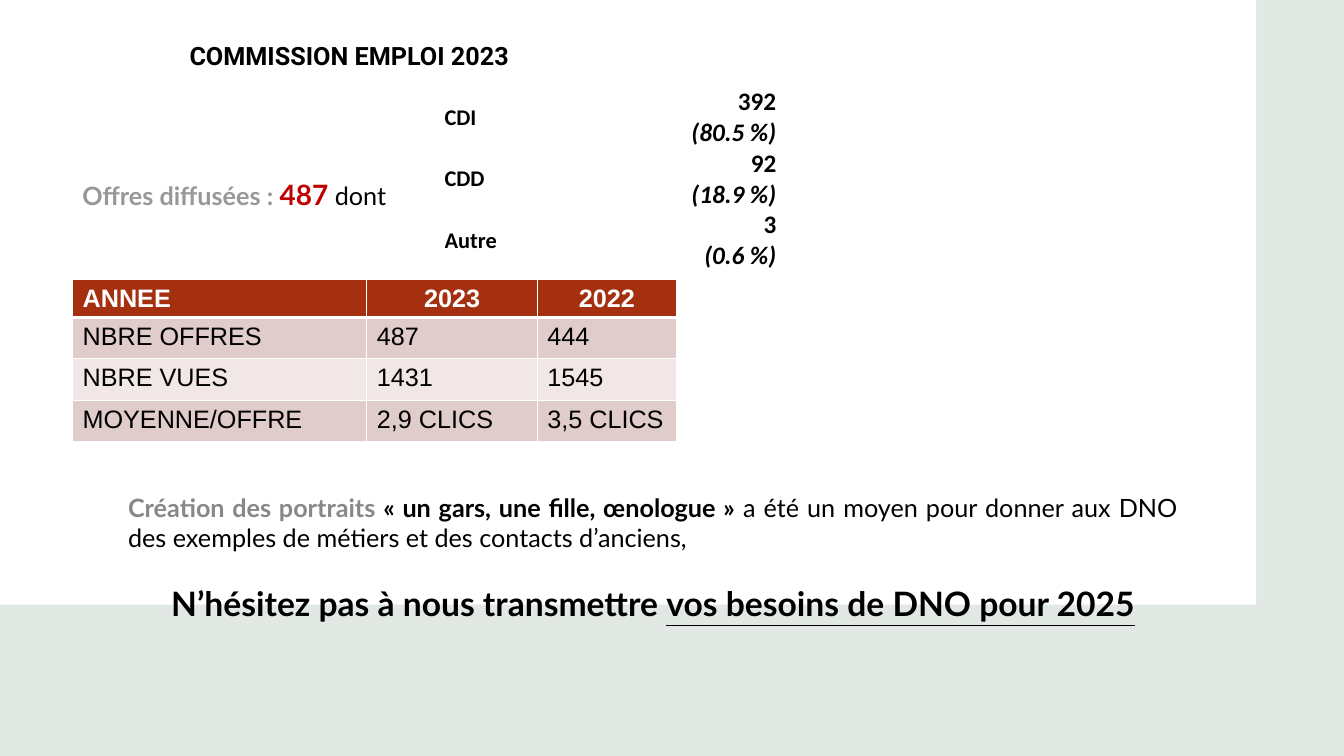
from dataclasses import dataclass

from lxml import etree
from pptx import Presentation
from pptx import util as u
from pptx.dml.color import RGBColor
from pptx.enum import shapes, text
from pptx.oxml import ns

LEFT, MID, RIGHT, JUST = (
    text.PP_ALIGN.LEFT, text.PP_ALIGN.CENTER, text.PP_ALIGN.RIGHT, text.PP_ALIGN.JUSTIFY)
TOP, HALF, BASE = (
    text.MSO_ANCHOR.TOP, text.MSO_ANCHOR.MIDDLE, text.MSO_ANCHOR.BOTTOM)


@dataclass(frozen=True)
class Theme:
    """Colours, fonts and type sizes of the slide."""
    sage: str = "E2E8E4"
    white: str = "FFFFFF"
    black: str = "000000"
    grey: str = "989898"
    dim: str = "888888"
    red: str = "C00000"
    rust: str = "A5300F"
    rose: str = "E0CCCA"
    pale: str = "F0E7E6"
    head: str = "Roboto"
    body: str = "Lato"
    jobs: str = "Calibri"
    grid: str = "Arial"
    small: int = 16
    base: int = 18
    large: int = 20
    huge: int = 24


class Page:
    """Draws on one slide, with lengths in percent of its width and height."""

    def __init__(self, deck, theme):
        self.deck, self.theme = deck, theme
        self.slide = deck.slides.add_slide(deck.slide_layouts[1])
        self.depth = 2

    def wide(self, share):
        return round(self.deck.slide_width * share / 100)

    def high(self, share):
        return round(self.deck.slide_height * share / 100)

    def box(self, x, y, w, h):
        return self.wide(x), self.high(y), self.wide(w), self.high(h)

    def style(self, font, name=None, size=None, color=None, **flags):
        if name:
            font.name = name
        if size:
            font.size = u.Pt(size)
        if color:
            font.color.rgb = RGBColor.from_string(color)
        for key, flag in flags.items():
            setattr(font, key, flag)

    def fill(self, para, runs, align=LEFT, **look):
        para.alignment = align
        self.style(para.font, **look)
        for words, extra in runs:
            run = para.add_run()
            run.text = words
            self.style(run.font, **extra)

    def panel(self, w, h, color):
        rect = self.slide.shapes.add_shape(
            shapes.MSO_SHAPE.RECTANGLE, *self.box(0, 0, w, h))
        rect.shadow.inherit = False
        rect.fill.solid()
        rect.fill.fore_color.rgb = RGBColor.from_string(color)
        rect.line.fill.background()
        self.slide.shapes._spTree.insert(self.depth, rect._element)
        self.depth += 1

    def frame(self, shape, anchor=TOP):
        frame = shape.text_frame
        frame.word_wrap = True
        frame.auto_size = text.MSO_AUTO_SIZE.NONE
        frame.vertical_anchor = anchor
        return frame

    def holder(self, index, place):
        shape = self.slide.placeholders[index]
        shape.left, shape.top, shape.width, shape.height = self.box(*place)
        return self.frame(shape)

    def label(self, place):
        return self.frame(self.slide.shapes.add_textbox(*self.box(*place)), BASE)

    def plain(self, para):
        props = para._p.get_or_add_pPr()
        props.set("marL", "0")
        props.set("indent", "0")
        props.insert_element_before(
            etree.Element(ns.qn("a:buNone")), "a:tabLst", "a:defRPr", "a:extLst")

    def table(self, x, y, cols, rows):
        frame = self.slide.shapes.add_table(
            len(rows), len(cols), *self.box(x, y, sum(cols), sum(rows)))
        table = frame.table
        table.first_row = table.horz_banding = False
        for col, share in zip(table.columns, cols):
            col.width = self.wide(share)
        for row, share in zip(table.rows, rows):
            row.height = self.high(share)
        return table

    def cell(self, cell, words, shade, align=LEFT, anchor=TOP, pad=None, **look):
        cell.fill.solid()
        cell.fill.fore_color.rgb = RGBColor.from_string(shade)
        cell.vertical_anchor = anchor
        if pad is not None:
            cell.margin_left = cell.margin_right = pad
            cell.margin_top = cell.margin_bottom = pad
        self.fill(cell.text_frame.paragraphs[0], [(words, {})], align, **look)

    def edges(self, cell, **widths):
        props = cell._tc.get_or_add_tcPr()
        for spot, side in enumerate("LRTB"):
            line = etree.Element(ns.qn("a:ln" + side), w=str(u.Pt(widths.get(side, 1))))
            fill = etree.SubElement(line, ns.qn("a:solidFill"))
            etree.SubElement(fill, ns.qn("a:srgbClr"), val=self.theme.white)
            props.insert(spot, line)


def main():
    deck = Presentation()
    deck.slide_width, deck.slide_height = u.Inches(13.33), u.Inches(7.5)
    look = Theme()
    page = Page(deck, look)
    page.panel(100, 100, look.sage)
    page.panel(93.47, 80, look.white)

    title = page.holder(0, (13.35, 3.87, 66.77, 6.13)).paragraphs[0]
    title.line_spacing = 1.2
    page.fill(title, [("COMMISSION EMPLOI 2023", {})],
              name=look.head, size=look.base, color=look.black, bold=True)

    offers = page.label((5.4, 15.47, 25.73, 13.07)).paragraphs[0]
    page.fill(offers, [
        ("Offres diffusées : ", dict(size=look.base, color=look.grey, bold=True)),
        ("487", dict(size=look.large, color=look.red, bold=True)),
        (" dont ", dict(size=look.base, color=look.black)),
    ], JUST, name=look.body)

    jobs = [("CDI", "392", "(80.5 %)"), ("CDD", "92", "(18.9 %)"), ("Autre", "3", "(0.6 %)")]
    split = page.table(33.08, 11.47, [11.85, 12.83], [4.07] * 2 * len(jobs))
    bold = dict(shade=look.white, pad=0, name=look.jobs, color=look.black, bold=True)
    for i, (kind, count, share) in enumerate(jobs):
        top, low = 2 * i, 2 * i + 1
        split.cell(top, 0).merge(split.cell(low, 0))
        page.cell(split.cell(top, 0), kind, anchor=HALF, size=look.small, **bold)
        page.cell(split.cell(top, 1), count, align=RIGHT, anchor=BASE, size=look.base, **bold)
        page.cell(split.cell(low, 1), share, align=RIGHT, anchor=BASE, size=look.base,
                  italic=True, **bold)

    years = [
        ("ANNEE", "2023", "2022"),
        ("NBRE OFFRES", "487", "444"),
        ("NBRE VUES", "1431", "1545"),
        ("MOYENNE/OFFRE", "2,9 CLICS", "3,5 CLICS"),
    ]
    views = page.table(5.4, 36.93, [21.9, 12.68, 10.35], [5.07] + [5.47] * 3)
    for r, row in enumerate(years):
        head = r == 0
        shade = look.rust if head else (look.pale, look.rose)[r % 2]
        for c, words in enumerate(row):
            cell = views.cell(r, c)
            page.cell(cell, words, shade, MID if head and c else LEFT, name=look.grid,
                      size=look.base, color=look.white if head else look.black, bold=head)
            page.edges(cell, T=3 if r == 1 else 1, B=3 if head else 1)

    body = page.holder(1, (8.78, 64.4, 79.6, 18.8))
    news, call = body.paragraphs[0], body.add_paragraph()
    page.fill(news, [
        ("Création des portraits ", dict(color=look.dim, bold=True)),
        ("« un gars, une fille, œnologue »", dict(color=look.black, bold=True)),
        (" a été un moyen pour donner aux DNO des exemples de métiers et des contacts d’anciens,",
         dict(color=look.black)),
    ], JUST, name=look.body, size=look.base)
    page.fill(call, [
        ("N’hésitez pas à nous transmettre ", {}),
        ("vos besoins de DNO pour 2025", dict(underline=True)),
    ], MID, name=look.body, size=look.huge, color=look.black, bold=True)
    for para, gap in ((news, 0), (call, 22)):
        para.space_before = u.Pt(gap)
        page.plain(para)

    deck.save("out.pptx")


if __name__ == "__main__":
    main()
